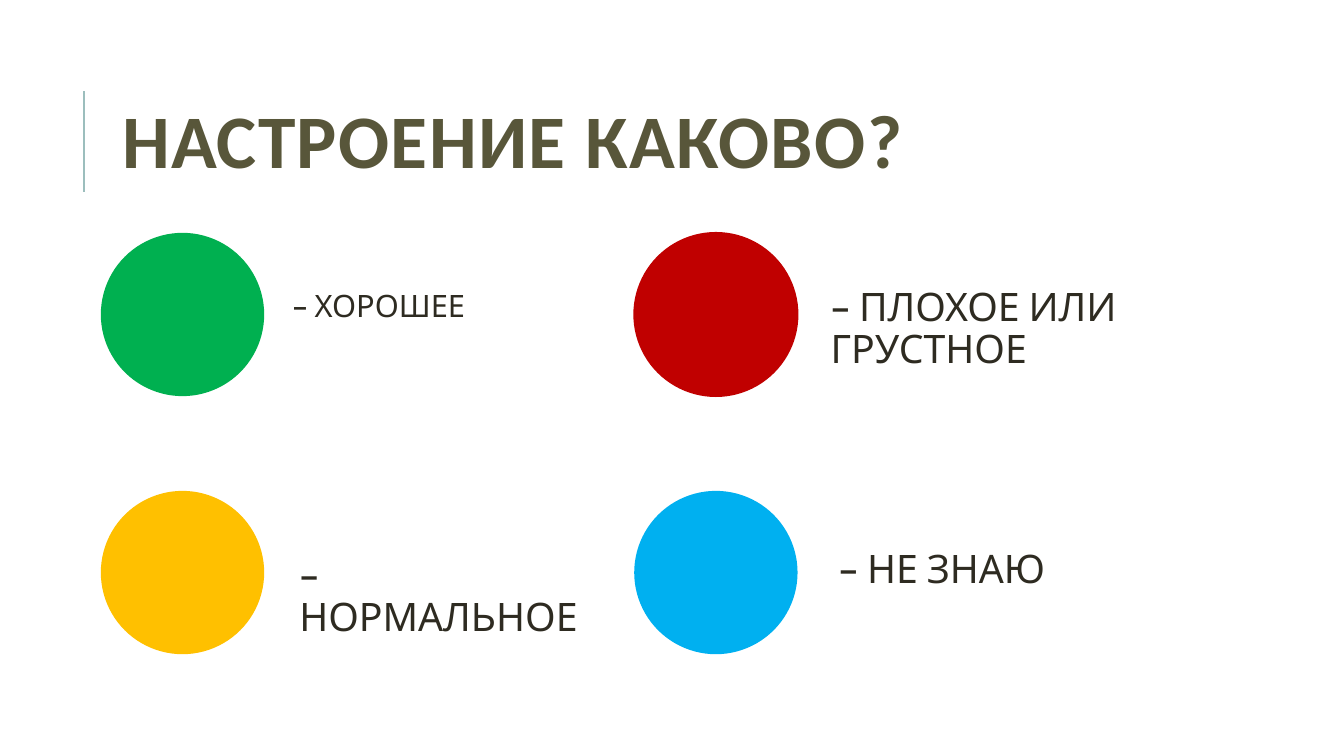
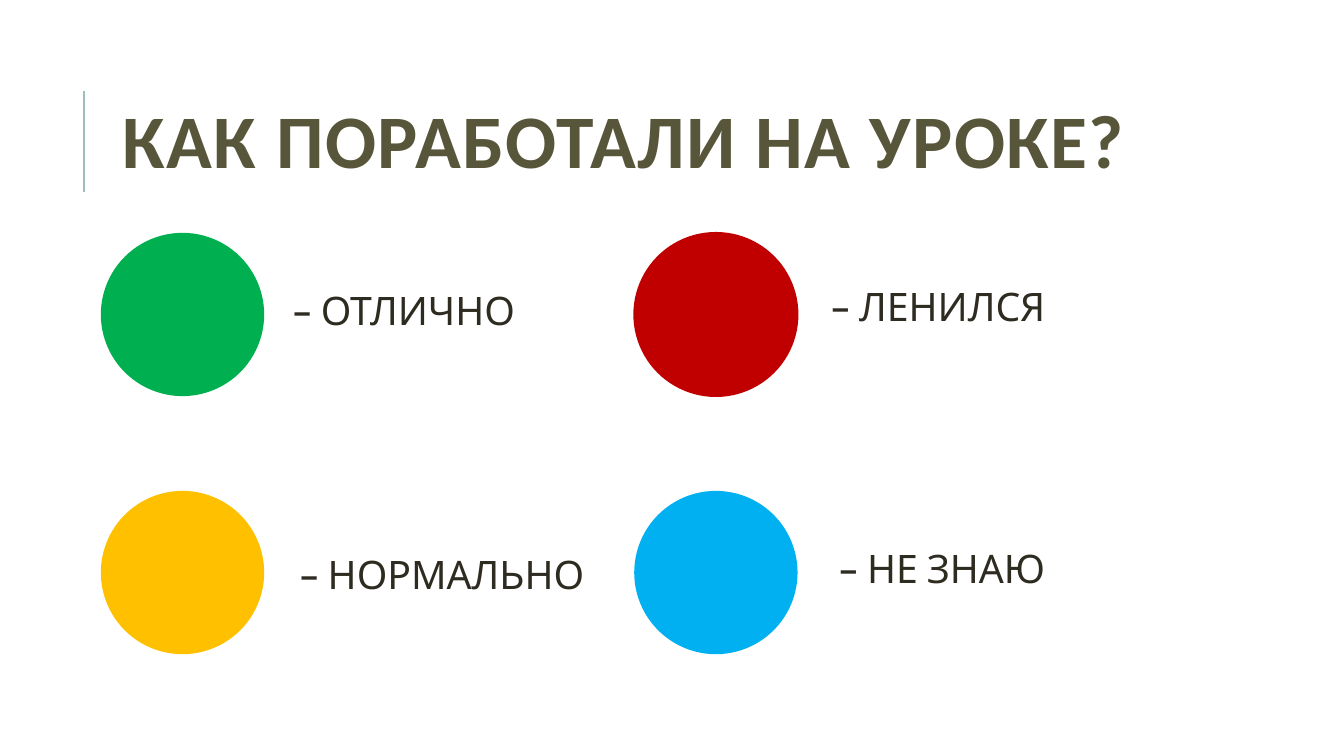
"""Build two feedback slides with coloured circles and their answers."""
from lxml import etree
from pptx import Presentation
from pptx.dml.color import RGBColor
from pptx.enum.shapes import MSO_CONNECTOR, MSO_SHAPE
from pptx.enum.text import MSO_ANCHOR
from pptx.oxml.ns import qn
from pptx.util import Inches, Pt

LINE, OVAL = MSO_CONNECTOR.STRAIGHT, MSO_SHAPE.OVAL
TOP, MIDDLE = MSO_ANCHOR.TOP, MSO_ANCHOR.MIDDLE

COLORS = {
    "rule": "9CBEBD", "title": "58563A", "text": "2E2B21",
    "green": "00B050", "yellow": "FFC000", "red": "C00000", "blue": "00B0F0",
}
SLIDES = [
    ("НАСТРОЕНИЕ КАКОВО?", [
        ("– ХОРОШЕЕ", 22), ("– НОРМАЛЬНОЕ", 28),
        ("– ПЛОХОЕ ИЛИ ГРУСТНОЕ", 28), ("– НЕ ЗНАЮ", 28)]),
    ("КАК ПОРАБОТАЛИ НА УРОКЕ?", [
        ("– ОТЛИЧНО", 28), ("– НОРМАЛЬНО", 28),
        ("– ЛЕНИЛСЯ", 28), ("– НЕ ЗНАЮ", 28)]),
]
DOTS = ["green", "yellow", "red", "blue"]
LABELS = [
    {"box": (2.85, 2.84, 2.75, 0.56), "pad": 0.05, "before": 12, "after": 2},
    {"box": (2.87, 5.46, 3.1, 0.56)},
    {"box": (8.14, 2.8, 4.48, 0.56)},
    {"box": (8.22, 5.4, 2.75, 0.56)},
]
TITLE = (1.12, 0.64, 10.63, 1.64)
LEFT, UPPER, SIZE = 1, 2.31, 1.62
STEP_X, STEP_Y = 5.29, 2.56


def color(name):
    return RGBColor.from_string(COLORS[name])


def add_text(slide, text, size, box, font="Cabin", ink="text", bold=False,
             anchor=TOP, space=0.9, before=10, after=0, pad=None):
    frame = slide.shapes.add_textbox(*map(Inches, box)).text_frame
    frame.word_wrap = True
    frame.vertical_anchor = anchor
    if pad is not None:
        frame.margin_left = frame.margin_right = Inches(pad)
        frame.margin_top = frame.margin_bottom = Inches(pad)
    para = frame.paragraphs[0]
    para.line_spacing = space
    para.space_before, para.space_after = Pt(before), Pt(after)
    run = para.add_run()
    run.text = text
    run.font.name, run.font.size, run.font.bold = font, Pt(size), bold
    run.font.color.rgb = color(ink)
    return run


def add_title(slide, text):
    rule = slide.shapes.add_connector(
        LINE, Inches(0.83), Inches(1.9), Inches(0.83), Inches(0.9))
    rule.line.color.rgb = color("rule")
    rule.line.width = Pt(1.5)
    etree.SubElement(rule._element.spPr, qn("a:effectLst"))
    run = add_text(slide, text, 54, TITLE, "Calibri", "title", True,
                   MIDDLE, space=0.8, before=0)
    run.font._element.set("spc", "100")


def add_dot(slide, index, name):
    col, row = divmod(index, 2)
    dot = slide.shapes.add_shape(
        OVAL, Inches(LEFT + col * STEP_X), Inches(UPPER + row * STEP_Y),
        Inches(SIZE), Inches(SIZE))
    dot.shadow.inherit = False
    dot.fill.solid()
    dot.fill.fore_color.rgb = color(name)
    if name == "red":
        dot.line.color.rgb = color(name)
        dot.line.width = Pt(1.25)
    else:
        dot.line.fill.background()


def main():
    deck = Presentation()
    deck.slide_width, deck.slide_height = Inches(13.33), Inches(7.5)
    for title, answers in SLIDES:
        slide = deck.slides.add_slide(deck.slide_layouts[6])
        add_title(slide, title)
        for index, name in enumerate(DOTS):
            add_dot(slide, index, name)
        for (text, size), label in zip(answers, LABELS):
            add_text(slide, text, size, **label)
    deck.save("out.pptx")


if __name__ == "__main__":
    main()
